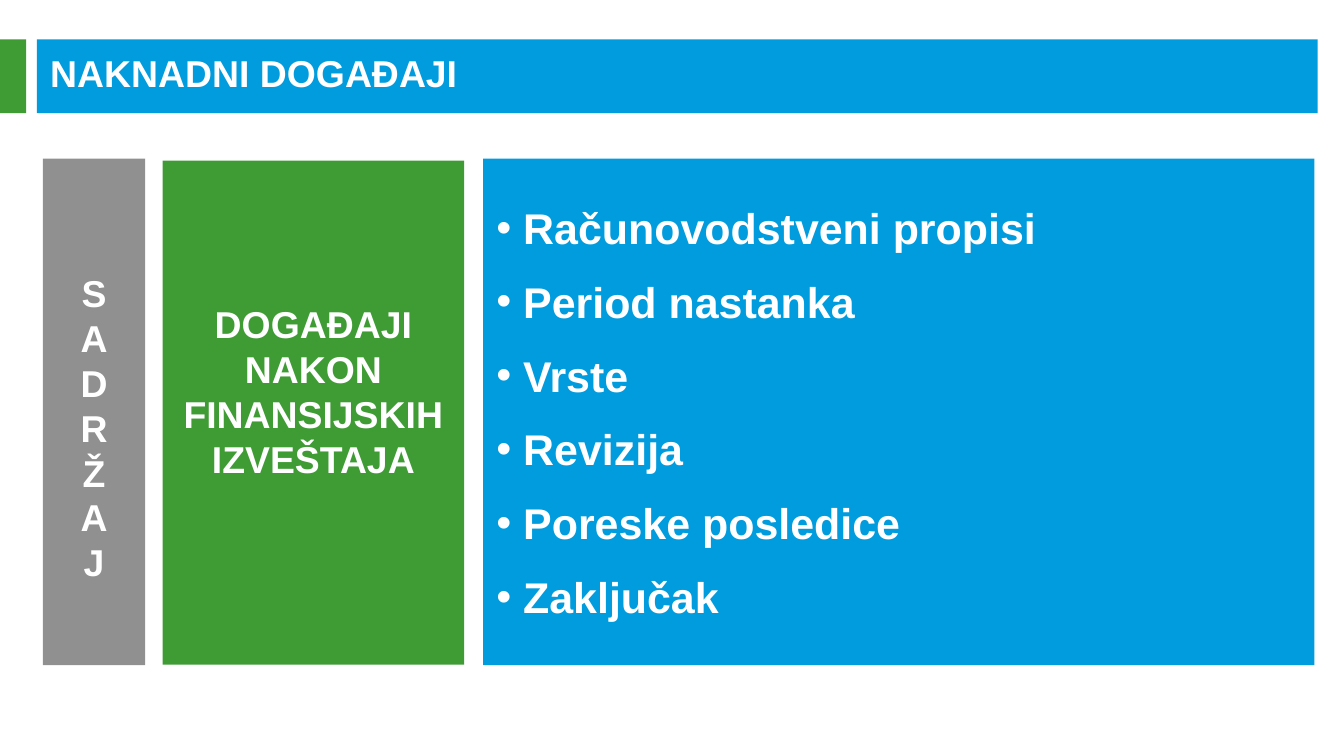
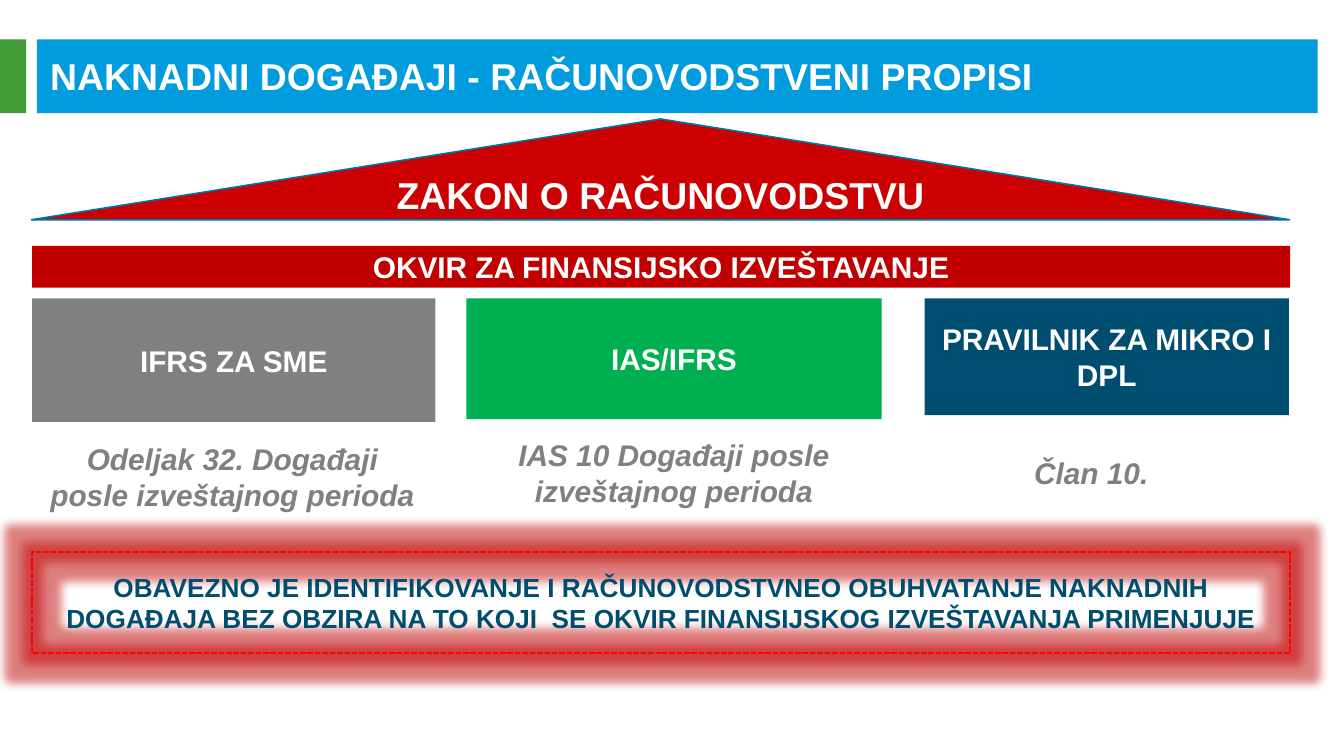
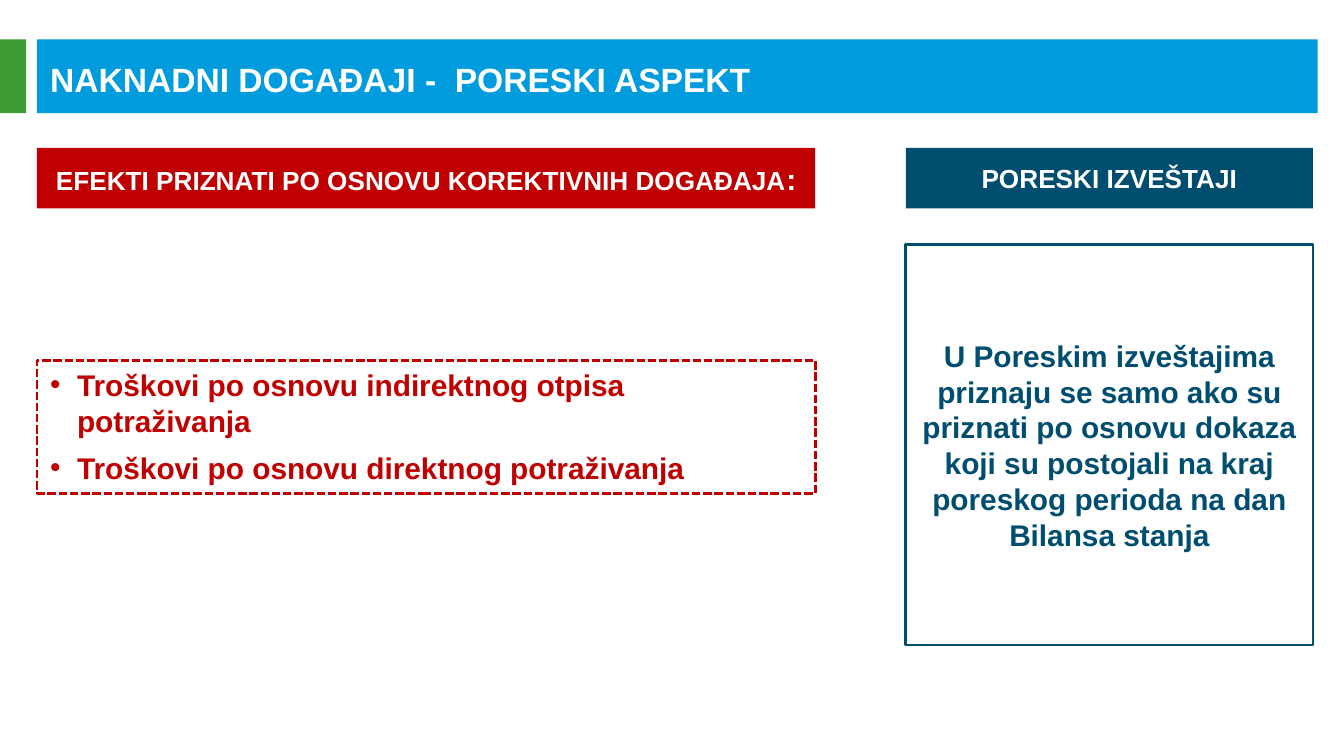
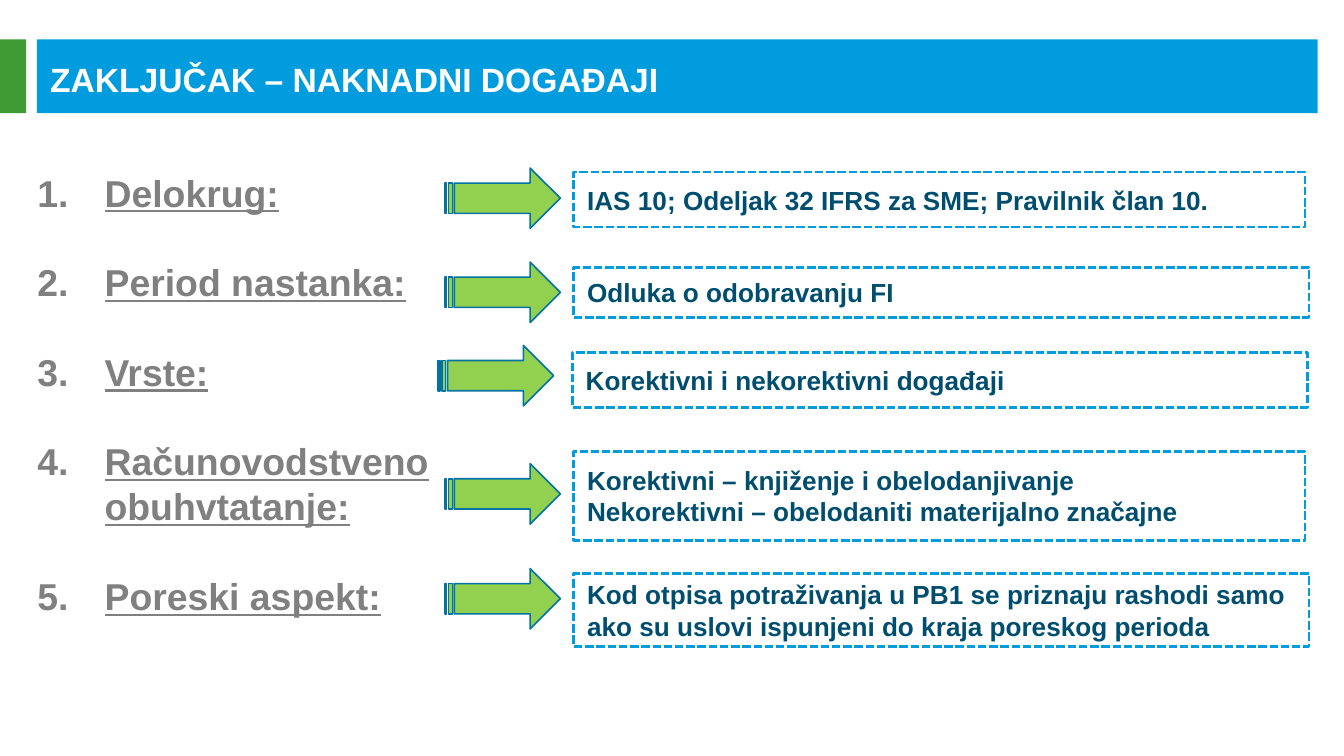
"""Build four slides on events after the reporting period."""
from lxml import etree
from pptx import Presentation
from pptx import util as u
from pptx.dml.color import RGBColor
from pptx.enum import dml, shapes, text
from pptx.oxml.ns import qn

WHITE = RGBColor(0xFF, 0xFF, 0xFF)
BLUE = RGBColor(0x00, 0x9C, 0xDE)
GREEN = RGBColor(0x3F, 0x9C, 0x35)
GRAY = RGBColor(0x80, 0x80, 0x80)
NAVY = RGBColor(0x00, 0x4E, 0x6F)
OUTLINE = RGBColor(0x00, 0x73, 0xA4)
RED = RGBColor(0xCC, 0x00, 0x00)
DARK_RED = RGBColor(0xC0, 0x00, 0x00)
BRIGHT_RED = RGBColor(0xFF, 0x00, 0x00)
EMERALD = RGBColor(0x00, 0xB0, 0x50)
LIME = RGBColor(0x92, 0xD0, 0x50)

presentation = Presentation()
presentation.slide_width = u.Inches(10)
presentation.slide_height = presentation.slide_width * 9 // 16
COLUMN = presentation.slide_width / 100
ROW = presentation.slide_height / 56.25

RECTANGLE = shapes.MSO_SHAPE.RECTANGLE
DASH = dml.MSO_LINE.SQUARE_DOT
LEFT, CENTER = text.PP_ALIGN.LEFT, text.PP_ALIGN.CENTER
MIDDLE, TOP = text.MSO_ANCHOR.MIDDLE, text.MSO_ANCHOR.TOP


def add_box(slide, place, lines=(), kind=RECTANGLE, fill=None, line=None, dash=None,
            width=1.5, align=CENTER, anchor=MIDDLE, gap=0, bullet=None, indent=0.2, **font):
    """Add a shape, or a text box when kind is None, placed by grid columns and rows."""
    left, top, columns, rows = place
    frame = [round(n) for n in (left * COLUMN, top * ROW, columns * COLUMN, rows * ROW)]
    shape = slide.shapes.add_shape(kind, *frame) if kind else slide.shapes.add_textbox(*frame)
    shape.shadow.inherit = False
    for paint, color in ((shape.fill, fill), (shape.line.fill, line)):
        if color is None:
            paint.background()
        else:
            paint.solid()
            paint.fore_color.rgb = color
    if line is not None:
        shape.line.width = u.Pt(width)
        shape.line.dash_style = dash
    shape.text_frame.word_wrap = True
    shape.text_frame.vertical_anchor = anchor
    style = {"name": "Arial", "size": u.Pt(16), "bold": True, **font}
    color = style.pop("color", WHITE)
    for index, line_text in enumerate(lines):
        paragraph = shape.text_frame.paragraphs[0] if index == 0 else shape.text_frame.add_paragraph()
        paragraph.alignment = align
        if index and gap:
            paragraph.space_before = u.Pt(gap)
        if bullet:
            tag, attribute, value = bullet
            properties = paragraph._p.get_or_add_pPr()
            properties.set("marL", str(u.Inches(indent)))
            properties.set("indent", str(-u.Inches(indent)))
            etree.SubElement(properties, qn("a:buFont")).set("typeface", "Arial")
            etree.SubElement(properties, qn(tag)).set(attribute, value)
        run = paragraph.add_run()
        run.text = line_text
        for name, value in style.items():
            setattr(run.font, name, value)
        run.font.color.rgb = color
    return shape


DOT = ("a:buChar", "char", "•")
NUMBER = ("a:buAutoNum", "type", "arabicPeriod")

slides = []
for title, top, rows, size in (
    ("NAKNADNI DOGAĐAJI", 3.9, 3, 20),
    ("NAKNADNI DOGAĐAJI - RAČUNOVODSTVENI PROPISI", 2.1, 7, 20),
    ("NAKNADNI DOGAĐAJI -  PORESKI ASPEKT", 3, 5.8, 18),
    ("ZAKLJUČAK – NAKNADNI DOGAĐAJI", 3, 5.8, 18),
):
    slide = presentation.slides.add_slide(presentation.slide_layouts[6])
    add_box(slide, (2.75, 2.93, 95.3, 5.5), fill=BLUE)
    add_box(slide, (0, 2.93, 1.95, 5.5), fill=GREEN)
    add_box(slide, (2.75, top, 95.3, rows), [title], kind=None, align=LEFT, size=u.Pt(size))
    slides.append(slide)
contents, regulations, tax, conclusion = slides

subject = add_box(contents, (12.1, 11.95, 22.45, 37.5), ["DOGAĐAJI NAKON FINANSIJSKIH IZVEŠTAJA"],
                  fill=GREEN, size=u.Pt(20))
subject.text_frame.margin_bottom = round(3.7 * ROW)
sidebar = add_box(contents, (3.2, 11.8, 7.6, 37.7), "SADRŽAJ", fill=GRAY, size=u.Pt(20))
sidebar.text_frame.margin_top = round(2.8 * ROW)
sidebar_color = sidebar._element.spPr.find(qn("a:solidFill"))[0]
etree.SubElement(sidebar_color, qn("a:alpha")).set("val", "87000")
topics = ["Računovodstveni propisi", "Period nastanka", "Vrste", "Revizija",
          "Poreske posledice", "Zaključak"]
add_box(contents, (35.95, 11.8, 61.85, 37.7), topics, fill=BLUE, align=LEFT, gap=12,
        bullet=DOT, size=u.Pt(23))

duty = add_box(regulations, (2.4, 41.1, 93.6, 7.5),
               ["OBAVEZNO JE IDENTIFIKOVANJE I RAČUNOVODSTVNEO OBUHVATANJE NAKNADNIH DOGAĐAJA "
                "BEZ OBZIRA NA TO KOJI  SE OKVIR FINANSIJSKOG IZVEŠTAVANJA PRIMENJUJE"],
               line=BRIGHT_RED, dash=DASH, width=1, size=u.Pt(14), color=NAVY)
glow = etree.SubElement(duty._element.spPr.find(qn("a:effectLst")), qn("a:glow"))
glow.set("rad", str(u.Pt(10)))
glow_color = etree.SubElement(glow, qn("a:srgbClr"))
glow_color.set("val", str(DARK_RED))
etree.SubElement(glow_color, qn("a:alpha")).set("val", "50000")

add_box(regulations, (2.35, 8.85, 93.6, 7.5), ["ZAKON O RAČUNOVODSTVU"],
        kind=shapes.MSO_SHAPE.FLOWCHART_EXTRACT, fill=RED, line=OUTLINE, width=0.85, size=u.Pt(20))
add_box(regulations, (2.4, 18.3, 93.6, 3.1), ["OKVIR ZA FINANSIJSKO IZVEŠTAVANJE"], fill=DARK_RED)
for framework, left, columns, rows, fill, reference, place in (
    ("IFRS ZA SME", 2.4, 30, 9.2, GRAY,
     "Odeljak 32. Događaji posle izveštajnog perioda", (2.3, 33.2, 30, 4.5)),
    ("IAS/IFRS", 34.7, 30.9, 9, EMERALD,
     "IAS 10 Događaji posle izveštajnog perioda", (35.6, 32.9, 29.1, 4.5)),
    ("PRAVILNIK ZA MIKRO I DPL", 68.8, 27.1, 8.7, NAVY, "Član 10.", (74.2, 32.9, 14, 4.5)),
):
    add_box(regulations, (left, 22.2, columns, rows), [framework], fill=fill)
    add_box(regulations, place, [reference], kind=None, color=GRAY, italic=True)

add_box(tax, (67.4, 11, 30.3, 4.5), ["PORESKI IZVEŠTAJI"], fill=NAVY, size=u.Pt(14))
effects = add_box(tax, (2.75, 11, 57.9, 4.5), ["EFEKTI PRIZNATI PO OSNOVU KOREKTIVNIH DOGAĐAJA"],
                  fill=DARK_RED, size=u.Pt(14))
colon = effects.text_frame.paragraphs[0].add_run()
colon.text = ":"
for name, value in {"name": "Arial", "size": u.Pt(16), "bold": True}.items():
    setattr(colon.font, name, value)
colon.font.color.rgb = WHITE
add_box(tax, (67.4, 18.2, 30.3, 29.8),
        ["U Poreskim izveštajima priznaju se samo ako su priznati po osnovu dokaza "
         "koji su postojali na kraj poreskog perioda na dan Bilansa stanja"],
        line=NAVY, color=NAVY)
add_box(tax, (2.75, 26.8, 57.9, 9.9),
        ["Troškovi po osnovu indirektnog otpisa potraživanja",
         "Troškovi po osnovu direktnog potraživanja"],
        line=DARK_RED, dash=DASH, align=LEFT, anchor=TOP, gap=6, bullet=DOT, color=DARK_RED)

questions = ["Delokrug:", "Period nastanka:", "Vrste:", "Računovodstveno obuhvtatanje:",
             "Poreski aspekt:"]
add_box(conclusion, (1.8, 9.2, 32.5, 40.2), questions, kind=None, align=LEFT, gap=24,
        bullet=NUMBER, indent=0.5, size=u.Pt(20), color=GRAY, underline=True)
for answer, place, arrow_left, arrow_top in (
    (["IAS 10; Odeljak 32 IFRS za SME; Pravilnik član 10."], (42.7, 12.8, 54.4, 4.1), 33.1, 12.5),
    (["Odluka o odobravanju FI"], (42.7, 19.9, 54.7, 3.7), 33.1, 19.5),
    (["Korektivni i nekorektivni događaji"], (42.6, 26.2, 54.7, 4.1), 32.6, 25.7),
    (["Korektivni – knjiženje i obelodanjivanje",
      "Nekorektivni – obelodaniti materijalno značajne"], (42.7, 33.6, 54.4, 6.6), 33.1, 34.5),
    (["Kod otpisa potraživanja u PB1 se priznaju rashodi samo ako su uslovi ispunjeni "
      "do kraja poreskog perioda"], (42.7, 42.7, 54.7, 5.4), 33.1, 42.3),
):
    add_box(conclusion, place, answer, line=BLUE, dash=DASH, align=LEFT, size=u.Pt(14), color=NAVY)
    add_box(conclusion, (arrow_left, arrow_top, 8.6, 4.5),
            kind=shapes.MSO_SHAPE.STRIPED_RIGHT_ARROW, fill=LIME, line=OUTLINE, width=0.85)

presentation.save("out.pptx")
